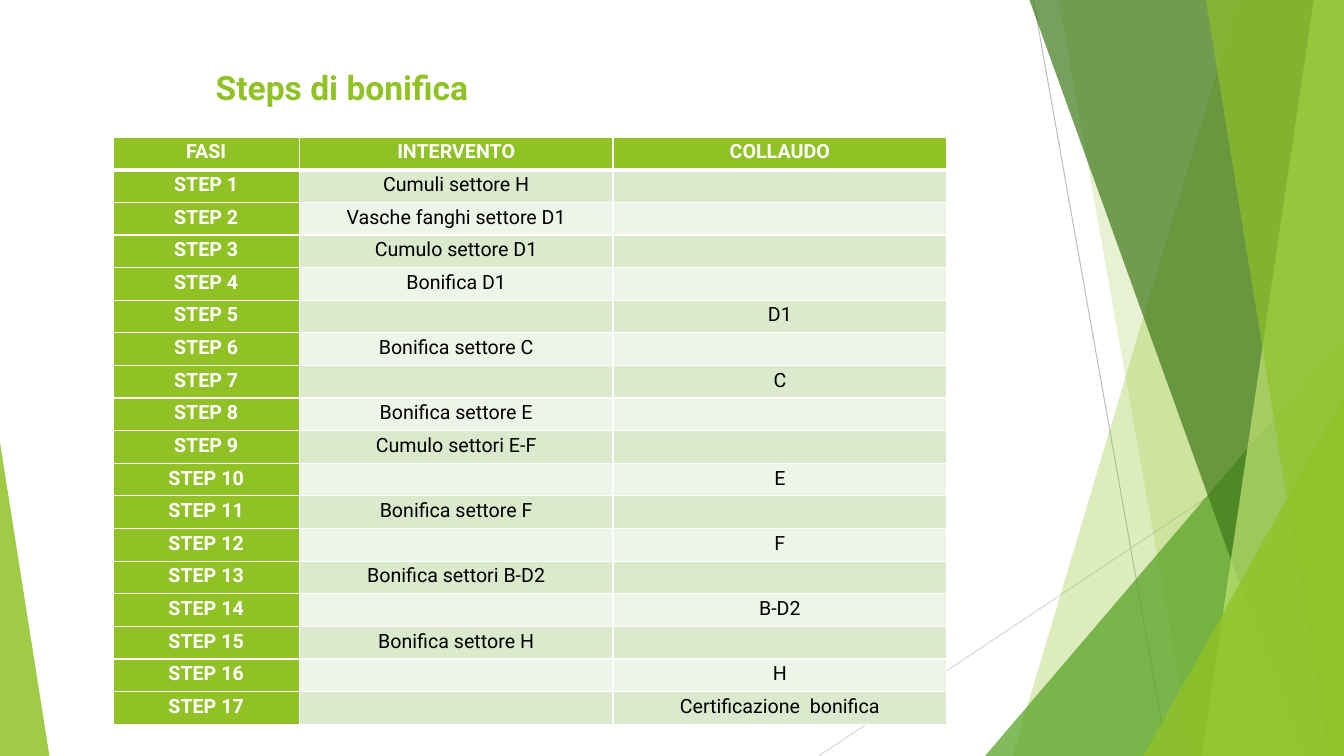
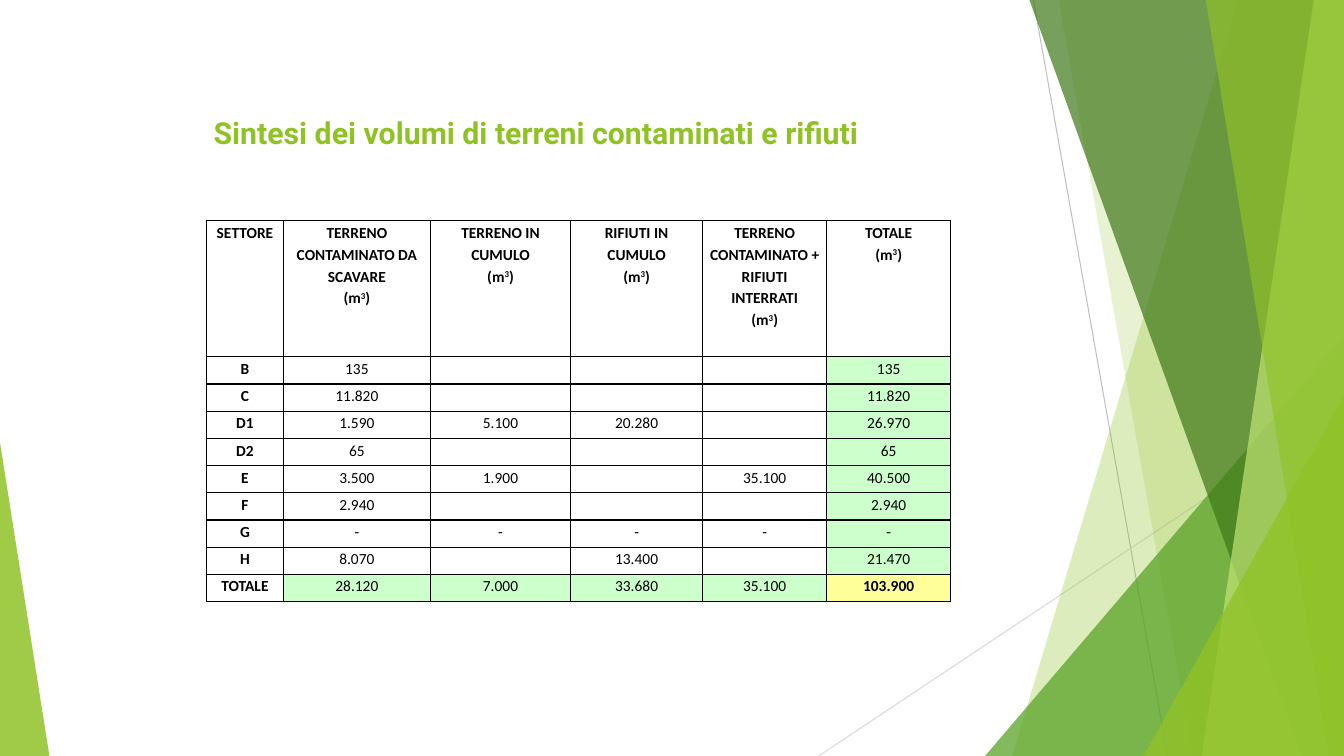
from lxml.etree import SubElement
from pptx import Presentation
from pptx.dml.color import RGBColor
from pptx.enum.shapes import MSO_CONNECTOR, MSO_SHAPE
from pptx.enum.text import PP_ALIGN
from pptx.oxml import parse_xml
from pptx.oxml.ns import nsdecls, qn
from pptx.util import Inches, Pt

LIME = RGBColor(0x90, 0xC2, 0x26)
GREEN = RGBColor(0x54, 0xA0, 0x21)
FOREST = RGBColor(0x3F, 0x78, 0x19)
PALE_LIME = RGBColor(0xC0, 0xE4, 0x74)
BAND_DARK = RGBColor(0xDB, 0xE9, 0xCD)
BAND_LIGHT = RGBColor(0xEE, 0xF4, 0xE8)
MINT = RGBColor(0xCC, 0xFF, 0xCC)
YELLOW = RGBColor(0xFF, 0xFF, 0x99)
GREY = RGBColor(0xBF, 0xBF, 0xBF)
LIGHT_GREY = RGBColor(0xD9, 0xD9, 0xD9)
WHITE = RGBColor(0xFF, 0xFF, 0xFF)
BLACK = RGBColor(0, 0, 0)

WIDTH, HEIGHT = 13.33, 7.5
TITLE_FONT = "Roboto"
TABLE_FONT = "Calibri"

STEPS = [
    ("Cumuli settore H", ""),
    ("Vasche fanghi settore D1", ""),
    ("Cumulo settore D1", ""),
    ("Bonifica D1", ""),
    ("", "D1"),
    ("Bonifica settore C", ""),
    ("", "C"),
    ("Bonifica settore E", ""),
    ("Cumulo settori E-F", ""),
    ("", "E"),
    ("Bonifica settore F", ""),
    ("", "F"),
    ("Bonifica settori B-D2", ""),
    ("", "B-D2"),
    ("Bonifica settore H", ""),
    ("", "H"),
    ("", "Certificazione  bonifica"),
]

VOLUME_HEADS = [
    "TERRENO CONTAMINATO DA SCAVARE",
    "TERRENO IN CUMULO",
    "RIFIUTI IN CUMULO",
    "TERRENO CONTAMINATO + RIFIUTI INTERRATI",
    "TOTALE",
]
VOLUMES = [
    ("B", "135", "", "", "", "135"),
    ("C", "11.820", "", "", "", "11.820"),
    ("D1", "1.590", "5.100", "20.280", "", "26.970"),
    ("D2", "65", "", "", "", "65"),
    ("E", "3.500", "1.900", "", "35.100", "40.500"),
    ("F", "2.940", "", "", "", "2.940"),
    ("G", "-", "-", "-", "-", "-"),
    ("H", "8.070", "", "13.400", "", "21.470"),
    ("TOTALE", "28.120", "7.000", "33.680", "35.100", "103.900"),
]


class Deck:
    def __init__(self):
        self.prs = Presentation()
        self.prs.slide_width = Inches(WIDTH)
        self.prs.slide_height = Inches(HEIGHT)
        self.s = None

    def new_slide(self):
        self.s = self.prs.slides.add_slide(self.prs.slide_layouts[6])
        self.line((10.25, 0), (11.58, HEIGHT), GREY)
        self.line((WIDTH, 4.03), (8.12, HEIGHT), LIGHT_GREY)
        self.blade(12.28, 10.04, LIME, 30)
        self.blade(10.5, 11.83, LIME, 20)
        self.triangle(9.77, 3.33, 3.56, 1, GREEN, 72)
        self.blade(10.21, 12.91, FOREST, 70)
        self.blade(13.03, 11.92, PALE_LIME, 70)
        self.blade(11.96, 13.18, LIME, 65)
        self.triangle(11.34, 3.93, 1.99, 1, LIME, 80)
        self.triangle(0, 4.39, 0.49, 0, LIME, 85)

    def line(self, start, end, color):
        ends = [Inches(v) for v in (*start, *end)]
        sp = self.s.shapes.add_connector(MSO_CONNECTOR.STRAIGHT, *ends)
        sp.line.color.rgb = color
        sp.line.width = Pt(0.75)
        SubElement(sp._element.spPr, qn("a:effectLst"))

    def paint(self, sp, color, opacity):
        sp.shadow.inherit = False
        sp.fill.solid()
        sp.fill.fore_color.rgb = color
        clr = sp._element.spPr.find(".//" + qn("a:srgbClr"))
        SubElement(clr, qn("a:alpha"), val=str(opacity * 1000))
        sp.line.fill.background()

    def blade(self, top_x, bottom_x, color, opacity):
        points = [(WIDTH, 0), (WIDTH, HEIGHT), (bottom_x, HEIGHT)]
        builder = self.s.shapes.build_freeform(Inches(top_x), 0)
        builder.add_line_segments([(Inches(x), Inches(y)) for x, y in points])
        self.paint(builder.convert_to_shape(), color, opacity)

    def triangle(self, left, top, width, apex, color, opacity):
        sp = self.s.shapes.add_shape(
            MSO_SHAPE.ISOSCELES_TRIANGLE,
            Inches(left), Inches(top), Inches(width), Inches(HEIGHT - top))
        sp.adjustments[0] = apex
        self.paint(sp, color, opacity)

    def run(self, p, text, font, size, color, bold, raised=False):
        r = p.add_run()
        r.text = text
        r.font.name = font
        r.font.size = Pt(size)
        r.font.color.rgb = color
        r.font.bold = bold
        if raised:
            r._r.get_or_add_rPr().set("baseline", "30000")

    def title(self, text, left, top, width, height, size):
        sp = self.s.shapes.add_textbox(
            Inches(left), Inches(top), Inches(width), Inches(height))
        tf = sp.text_frame
        tf.word_wrap = True
        self.run(tf.paragraphs[0], text, TITLE_FONT, size, LIME, True)

    def table(self, left, top, col_widths, row_heights):
        table = self.s.shapes.add_table(
            len(row_heights), len(col_widths), Inches(left), Inches(top),
            Inches(sum(col_widths)), Inches(sum(row_heights))).table
        table.first_row = False
        table.horz_banding = False
        for column, width in zip(table.columns, col_widths):
            column.width = Inches(width)
        for row, height in zip(table.rows, row_heights):
            row.height = Inches(height)
        return table

    def cell(self, cell, paragraphs, font, size, color, bold, fill, edge,
             top=1, bottom=1):
        cell.margin_left = cell.margin_right = Inches(0.07)
        cell.margin_top = cell.margin_bottom = 0
        tf = cell.text_frame
        for i, runs in enumerate(paragraphs):
            p = tf.add_paragraph() if i else tf.paragraphs[0]
            p.alignment = PP_ALIGN.CENTER
            p.line_spacing = 1.15
            for text, raised in runs:
                if text:
                    self.run(p, text, font, size, color, bold, raised)
                else:
                    SubElement(p._p, qn("a:endParaRPr"), sz=str(size * 100))
        if fill is None:
            cell.fill.background()
        else:
            cell.fill.solid()
            cell.fill.fore_color.rgb = fill
        tc_pr = cell._tc.get_or_add_tcPr()
        for i, (side, width) in enumerate(
                [("L", 1), ("R", 1), ("T", top), ("B", bottom)]):
            tc_pr.insert(i, parse_xml(
                f'<a:ln{side} {nsdecls("a")} w="{Pt(width)}"><a:solidFill>'
                f'<a:srgbClr val="{edge}"/></a:solidFill></a:ln{side}>'))


def plain(text):
    return [[(text, False)]]


def with_unit(text):
    return plain(text) + [[("(m", False), ("3", True), (")", False)]]


def steps_slide(deck):
    deck.new_slide()
    deck.title("Steps di bonifica", 2.04, 0.61, 3.01, 0.59, 24)
    rows = [("FASI", "INTERVENTO", "COLLAUDO")]
    rows += [(f"STEP {n}", *step) for n, step in enumerate(STEPS, 1)]
    table = deck.table(1.12, 1.36, [1.85, 3.11, 3.31], [5.83 / len(rows)] * len(rows))
    for i, row in enumerate(rows):
        band = BAND_DARK if i % 2 else BAND_LIGHT
        for j, text in enumerate(row):
            head = i == 0 or j == 0
            deck.cell(table.cell(i, j), plain(text), TITLE_FONT, 14,
                      WHITE if head else BLACK, head, LIME if head else band,
                      WHITE, top=3 if i == 1 else 1, bottom=3 if i == 0 else 1)


def volumes_slide(deck):
    deck.new_slide()
    deck.title("Sintesi dei volumi di terreni contaminati e rifiuti",
               2.02, 1.08, 7.38, 0.44, 21.6)
    rows = [[plain("SETTORE")] + [with_unit(head) for head in VOLUME_HEADS]]
    rows += [[plain(text) for text in row] for row in VOLUMES]
    table = deck.table(2.05, 2.19, [0.76, 1.46, 1.39, 1.31, 1.23, 1.23],
                       [1.35] + [0.27] * len(VOLUMES))
    last_row, last_col = len(VOLUMES), len(VOLUME_HEADS)
    for i, row in enumerate(rows):
        for j, paragraphs in enumerate(row):
            head = i == 0 or j == 0
            grand_total = i == last_row and j == last_col
            fill = None
            if grand_total:
                fill = YELLOW
            elif not head and (i == last_row or j == last_col):
                fill = MINT
            deck.cell(table.cell(i, j), paragraphs, TABLE_FONT, 11, BLACK,
                      head or grand_total, fill, BLACK)


def main():
    deck = Deck()
    steps_slide(deck)
    volumes_slide(deck)
    deck.prs.save("out.pptx")


if __name__ == "__main__":
    main()
